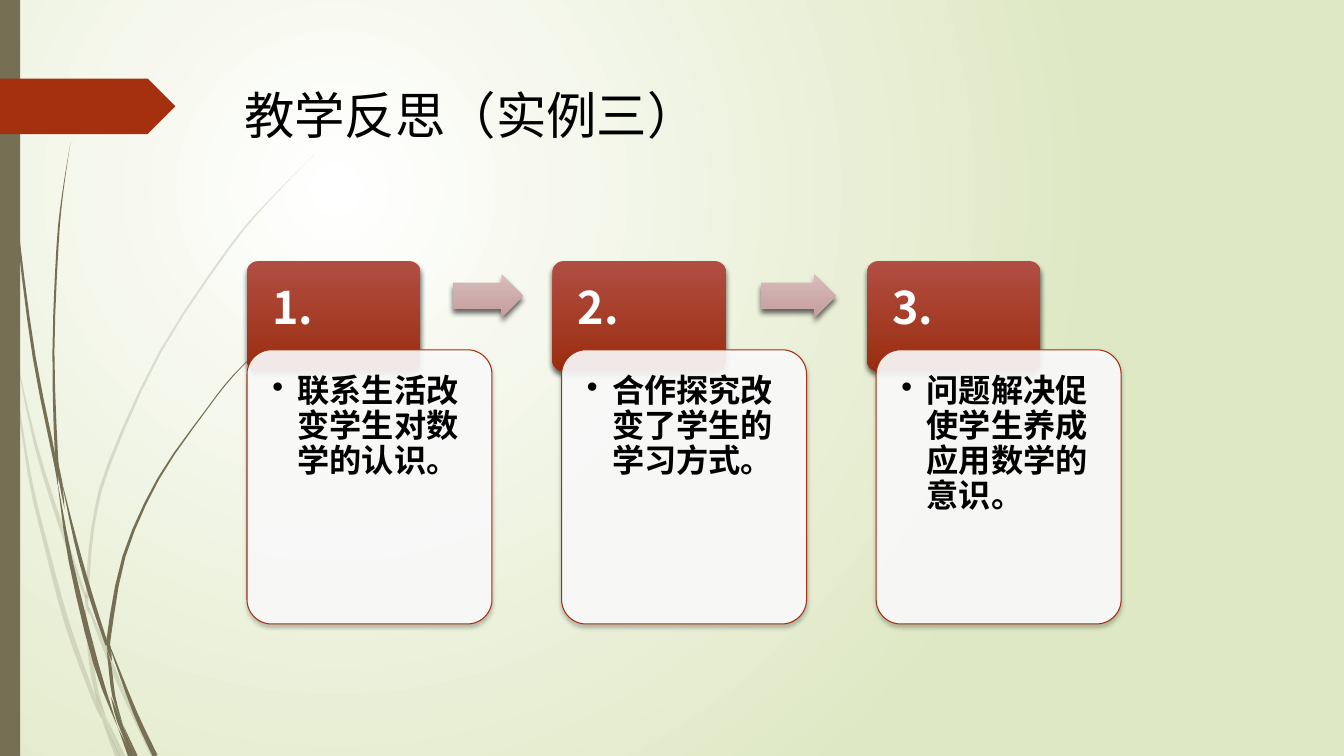
import math

import pptx
import pptx.dml.color
import pptx.enum.shapes
import pptx.enum.text
import pptx.oxml
import pptx.oxml.ns
import pptx.util
from pptx.util import Inches

RGB = pptx.dml.color.RGBColor
SHAPE = pptx.enum.shapes.MSO_SHAPE
ANCHOR = pptx.enum.text.MSO_ANCHOR
qn = pptx.oxml.ns.qn

WHITE = RGB(0xFF, 0xFF, 0xFF)
BLACK = RGB(0, 0, 0)
PALE_GREEN = RGB(0xDF, 0xE8, 0xC4)
OLIVE = RGB(0x76, 0x6F, 0x54)
RUST = RGB(0xA5, 0x30, 0x10)
TAB_COLORS = (RGB(0xB1, 0x4E, 0x43), RGB(0x9A, 0x2D, 0x0F))
ARROW_COLORS = (RGB(0xD7, 0xBB, 0xBA), RGB(0xC5, 0x9E, 0x9C))
FONT = "Noto Sans CJK SC"

# Pieces of grass blades: (x, y, thickness) along the middle, in inches
PALE_BLADES = [
    [(0, 2.9, .03), (.05, 3.18, .03), (.11, 3.5, 0)],
    [(.14, 3.45, 0), (.35, 4.4, .03), (.6, 5.21, .04), (.85, 5.93, .02)],
    [(.88, 6.03, .02), (1.07, 6.51, .04), (1.25, 6.93, .04), (1.53, 7.51, .05)],
    [(1.05, 7.11, 0), (1.22, 7.51, .05)],
    [(.11, 3.5, 0), (.29, 4.7, .03), (.47, 5.46, .04), (.67, 6.2, .05),
     (.92, 6.9, .04), (1.01, 7.14, 0)],
    [(.84, 5.99, 0), (.89, 6.46, .04), (.95, 6.83, .04), (1.05, 7.11, 0)],
    [(3.12, 1.53, 0), (2.68, 1.98, .01), (2.28, 2.45, .02), (1.59, 3.49, .02),
     (1.08, 4.61, .03), (.92, 5.24, .03), (.87, 5.84, .03), (.88, 5.96, 0)],
    [(1.01, 7.14, 0), (1.17, 7.51, .05)],
    [(.85, 5.86, 0), (.86, 5.98, .03), (.88, 6.1, 0)],
    [(.93, 6.83, 0), (1.02, 7.1, .04), (1.19, 7.51, 0)],
]
DARK_BLADES = [
    [(.03, 0, .01), (.07, 1.1, .01), (.18, 2.33, .02), (.34, 3.55, .03),
     (.55, 4.6, .03), (.57, 4.81, 0)],
    [(.6, 4.72, 0), (.75, 5.37, .03), (.9, 5.91, .04), (1.06, 6.4, .03)],
    [(1.1, 6.44, .01), (1.34, 7.07, .04), (1.54, 7.5, .05)],
    [(.57, 4.77, 0), (.7, 5.56, .04), (.95, 6.58, .05), (1.17, 7.22, 0)],
    [(.7, 1.41, 0), (.62, 1.93, .01), (.57, 2.45, .02), (.53, 3.49, .02),
     (.56, 4.51, .03), (.6, 4.72, 0)],
    [(1.22, 7.19, 0), (1.35, 7.5, .03)],
    [(.55, 4.49, 0), (.6, 4.77, .03), (.64, 5.05, 0)],
    [(2.6, 3.44, 0), (2.31, 3.73, .01), (2.05, 4.06, .01), (1.57, 4.75, .02),
     (1.23, 5.52, .03), (1.08, 6.32, .04), (1.1, 6.41, 0)],
    [(1.17, 7.22, 0), (1.29, 7.5, .04)],
    [(1.06, 6.45, 0), (1.09, 6.6, .03), (1.13, 6.91, .03), (1.22, 7.19, 0)],
    [(1.06, 6.31, 0), (1.08, 6.43, .04), (1.11, 6.56, 0)],
    [(1.1, 6.91, 0), (1.18, 7.15, .04), (1.32, 7.5, .03)],
]

# Lesson steps: tab left, text
STEPS = [
    (2.45, "联系生活改变学生对数学的认识。"),
    (5.48, "合作探究改变了学生的学习方式。"),
    (8.6, "问题解决促使学生养成应用数学的意识。"),
]
STEP_ARROWS = [(4.49, .7), (7.55, .74)]  # left, width
PANEL_LEFT, PANEL_PITCH = 2.45, 3.12


def set_alpha(shape, percent):
    color = shape._element.spPr.find(qn("a:solidFill"))[0]
    color.append(pptx.oxml.parse_xml(
        f'<a:alpha {pptx.oxml.ns.nsdecls("a")} val="{percent * 1000}"/>'))


def set_shadow(shape, alpha, blur, distance):
    effects = shape._element.spPr.find(qn("a:effectLst"))
    effects.append(pptx.oxml.parse_xml(
        f'<a:outerShdw {pptx.oxml.ns.nsdecls("a")} blurRad="{pptx.util.Pt(blur)}" '
        f'dist="{pptx.util.Pt(distance)}" dir="5400000" rotWithShape="0">'
        f'<a:srgbClr val="000000"><a:alpha val="{alpha * 1000}"/></a:srgbClr>'
        '</a:outerShdw>'))


def set_gradient(fill, colors):
    fill.gradient()
    for stop, color in zip(fill.gradient_stops, colors):
        stop.color.rgb = color


def solid(shape, color):
    shape.fill.solid()
    shape.fill.fore_color.rgb = color
    shape.line.fill.background()
    shape.shadow.inherit = False


def add_preset(slide, preset, box, color):
    shape = slide.shapes.add_shape(preset, *map(Inches, box))
    solid(shape, color)
    return shape


def add_glossy(slide, preset, box, adjustments, colors):
    shape = add_preset(slide, preset, box, colors[0])
    for index, value in enumerate(adjustments):
        shape.adjustments[index] = value
    set_gradient(shape.fill, colors)
    shape.fill.gradient_angle = 270
    set_shadow(shape, 60, 4, 3)
    return shape


def add_run(paragraph, text, size, color, bold=False):
    paragraph.alignment = pptx.enum.text.PP_ALIGN.LEFT
    run = paragraph.add_run()
    run.text = text
    run.font.name = FONT
    run.font.size = pptx.util.Pt(size)
    run.font.bold = bold
    run.font.color.rgb = color
    east_asian = run._r.get_or_add_rPr().makeelement(qn("a:ea"), {"typeface": FONT})
    run.font._element.find(qn("a:latin")).addnext(east_asian)


def fill_text(shape, text, size, color, sides, top):
    frame = shape.text_frame
    frame.word_wrap = True
    frame.vertical_anchor = ANCHOR.TOP
    frame.margin_left = frame.margin_right = Inches(sides)
    frame.margin_top = Inches(top)
    paragraph = frame.paragraphs[0]
    paragraph.line_spacing = 0.9
    add_run(paragraph, text, size, color, bold=True)
    return paragraph


def add_bullet(paragraph):
    properties = paragraph._p.get_or_add_pPr()
    properties.set("marL", str(Inches(.25)))
    properties.set("indent", str(-Inches(.25)))
    properties.append(properties.makeelement(qn("a:buChar"), {"char": "•"}))


def smooth(points, steps=3):
    """Catmull-Rom curve through the points."""
    padded = [points[0], *points, points[-1]]
    curve = []
    for a, b, c, d in zip(padded, padded[1:], padded[2:], padded[3:]):
        for t in (i / steps for i in range(steps)):
            curve.append(tuple(
                q + t / 2 * (r - p + t * (2 * p - 5 * q + 4 * r - s
                                          + t * (3 * (q - r) + s - p)))
                for p, q, r, s in zip(a, b, c, d)))
    return curve + [points[-1]]


def add_blade(slide, points):
    curve = smooth(points)
    left, right = [], []
    for i, (x, y, thickness) in enumerate(curve):
        x0, y0, _ = curve[max(i - 1, 0)]
        x1, y1, _ = curve[min(i + 1, len(curve) - 1)]
        half = thickness / 2 / math.hypot(x1 - x0, y1 - y0)
        dx, dy = (y0 - y1) * half, (x1 - x0) * half
        left.append((Inches(x + dx), Inches(y + dy)))
        right.append((Inches(x - dx), Inches(y - dy)))
    outline = left + right[::-1]
    builder = slide.shapes.build_freeform(*outline[0])
    builder.add_line_segments(outline[1:], close=True)
    blade = builder.convert_to_shape()
    solid(blade, OLIVE)
    return blade


def paint_background(slide):
    set_gradient(slide.background.fill, (WHITE, PALE_GREEN))
    gradient = slide._element.cSld.find(".//" + qn("a:gradFill"))
    gradient.replace(gradient.find(qn("a:lin")), pptx.oxml.parse_xml(
        f'<a:path {pptx.oxml.ns.nsdecls("a")} path="circle"><a:fillToRect '
        'l="50000" t="50000" r="100000" b="100000"/></a:path>'))


def add_title(slide, text):
    title = slide.shapes.title
    title.left, title.top, title.width, title.height = map(
        Inches, (2.32, .78, 5.93, .71))
    title.text_frame.word_wrap = True
    title.text_frame.vertical_anchor = ANCHOR.MIDDLE
    add_run(title.text_frame.paragraphs[0], text, 36, BLACK)


def add_step(slide, index, tab_left, text):
    tab = add_glossy(slide, SHAPE.ROUNDED_RECTANGLE, (tab_left, 2.59, 1.72, 1.09),
                     [.1], TAB_COLORS)
    fill_text(tab, f"{index + 1}.", 32, WHITE, .22, .21)
    panel = add_preset(slide, SHAPE.ROUNDED_RECTANGLE,
                       (PANEL_LEFT + index * PANEL_PITCH, 3.47, 2.43, 2.72), WHITE)
    panel.adjustments[0] = .1
    set_alpha(panel, 90)
    panel.line.color.rgb = RUST
    panel.line.width = pptx.util.Pt(.75)
    set_shadow(panel, 25, 3, 2)
    add_bullet(fill_text(panel, text, 23, BLACK, .18, .18))


def main():
    deck = pptx.Presentation()
    deck.slide_width, deck.slide_height = Inches(13.33), Inches(7.5)
    slide = deck.slides.add_slide(deck.slide_layouts[5])

    # Backdrop
    paint_background(slide)
    for points in PALE_BLADES:
        set_alpha(add_blade(slide, points), 20)
    for points in DARK_BLADES:
        add_blade(slide, points)
    add_preset(slide, SHAPE.RECTANGLE, (0, 0, .2, 7.5), OLIVE)
    add_preset(slide, SHAPE.PENTAGON, (0, .78, 1.74, .55), RUST)

    # Title and steps
    add_title(slide, "教学反思（实例三）")
    for index, (tab_left, text) in enumerate(STEPS):
        add_step(slide, index, tab_left, text)
    for left, width in STEP_ARROWS:
        add_glossy(slide, SHAPE.RIGHT_ARROW, (left, 2.72, width, .43),
                   [.6, .5], ARROW_COLORS)

    deck.save("out.pptx")


if __name__ == "__main__":
    main()
